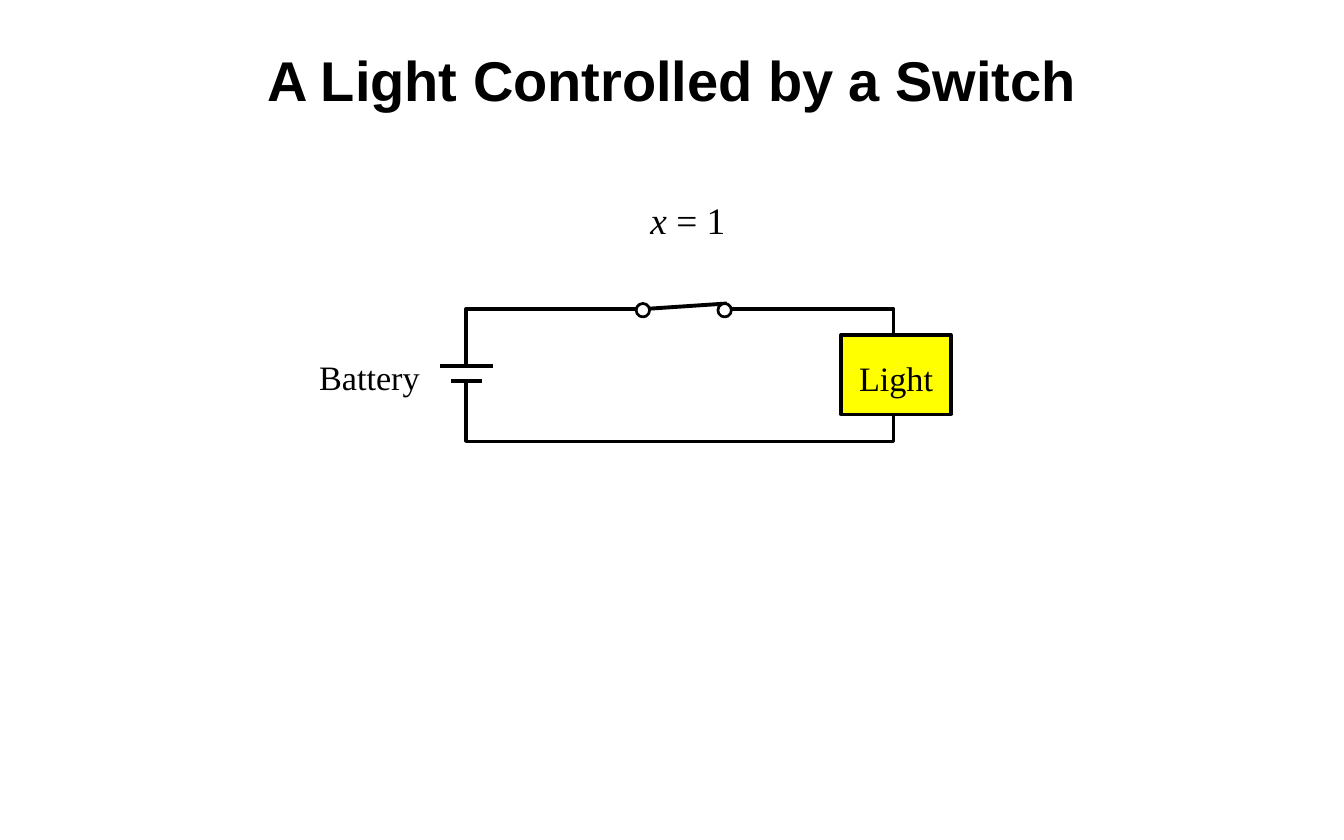
import pptx
import pptx.util
import pptx.dml.color
import pptx.enum.shapes
import pptx.enum.text
import pptx.oxml.ns
import lxml.etree

Inches, Pt = pptx.util.Inches, pptx.util.Pt
COLORS = {"ink": "000000", "lamp": "FFFF00", "paper": "FFFFFF"}
SERIF, SANS = "Times New Roman", "Arial"

# Content: places in inches
TITLE = "A Light Controlled by a Switch"
LEFT, RIGHT, TOP, BASE = 4.16, 7.98, 2.76, 3.94  # circuit loop
PLUS, MINUS = 3.27, 3.4  # battery plates
LAMP = (7.51, 2.99, 0.98, 0.71)
LAMP_END = LAMP[1] + LAMP[3]

LINES = [
    ((7.27, TOP), (6.43, TOP)),
    ((4.88, TOP), (5.72, TOP)),
    ((4.4, PLUS), (3.93, PLUS)),
    ((4.3, MINUS), (4.03, MINUS)),
    ((LEFT, MINUS), (LEFT, BASE)),
]
BENDS = [
    [(RIGHT, LAMP[1]), (RIGHT, TOP), (7.27, TOP)],
    [(4.88, TOP), (LEFT, TOP), (LEFT, PLUS)],
    [(LEFT, 3.87), (LEFT, BASE), (RIGHT, BASE), (RIGHT, LAMP_END)],
]
ARM = ((6.49, 2.71), (5.74, TOP))
POLES, POLE_TOP, POLE_SIZE = (5.68, 6.41), 2.71, 0.12
# Each label: box, size, inset, runs of (text, italic)
LABELS = [
    ((2.85, 3.18, 0.99, 0.37), 22, (0, 0), [("Battery", False)]),
    ((7.67, 3.19, 0.75, 0.37), 22, (0, 0), [("Light", False)]),
    ((5.71, 1.71, 0.94, 0.51), 24, (0.1, 0.05), [("x ", True), ("= 1", False)]),
]


def color(name):
    return pptx.dml.color.RGBColor.from_string(COLORS[name])


def style(shape, fill=None, width=2.25):
    shape.shadow.inherit = False
    shape.line.color.rgb = color("ink")
    shape.line.width = Pt(width)
    if fill:
        shape.fill.solid()
        shape.fill.fore_color.rgb = color(fill)
    else:
        shape.fill.background()


def add_line(shapes, ends, width=2.25):
    kind = pptx.enum.shapes.MSO_CONNECTOR.STRAIGHT
    line = shapes.add_connector(kind, *(Inches(v) for end in ends for v in end))
    line.line.color.rgb = color("ink")
    line.line.width = Pt(width)
    props = line._element.spPr
    lxml.etree.SubElement(props, pptx.oxml.ns.qn("a:effectLst"))


def add_bend(shapes, points):
    start, *rest = [(Inches(x), Inches(y)) for x, y in points]
    path = shapes.build_freeform(*start)
    path.add_line_segments(rest, close=False)
    style(path.convert_to_shape())


def add_shape(shapes, kind, box, fill, width=2.25):
    style(shapes.add_shape(kind, *map(Inches, box)), fill, width)


def set_font(font, name, size):
    font.name, font.size = name, Pt(size)
    font.color.rgb = color("ink")


def add_label(shapes, box, size, inset, runs):
    frame = shapes.add_textbox(*map(Inches, box)).text_frame
    frame.margin_left = frame.margin_right = Inches(inset[0])
    frame.margin_top = frame.margin_bottom = Inches(inset[1])
    frame.word_wrap = bool(inset[0])
    frame.auto_size = pptx.enum.text.MSO_AUTO_SIZE.SHAPE_TO_FIT_TEXT
    para = frame.paragraphs[0]
    set_font(para.font, SERIF, size)
    for text, slant in runs:
        run = para.add_run()
        run.text = text
        run.font.italic = slant


def main():
    deck = pptx.Presentation()
    deck.slide_width, deck.slide_height = Inches(12), Inches(7.5)
    slide = deck.slides.add_slide(deck.slide_layouts[5])
    shapes = slide.shapes
    kinds = pptx.enum.shapes.MSO_SHAPE

    # Title
    title = shapes.title
    title.left, title.top = Inches(1), Inches(0.33)
    title.width, title.height = Inches(10), Inches(0.75)
    frame = title.text_frame
    frame.text = TITLE
    frame.vertical_anchor = pptx.enum.text.MSO_ANCHOR.MIDDLE
    para = frame.paragraphs[0]
    para.alignment = pptx.enum.text.PP_ALIGN.CENTER
    set_font(para.font, SANS, 36)
    para.font.bold = True

    # Circuit
    for ends in LINES:
        add_line(shapes, ends)
    for points in BENDS:
        add_bend(shapes, points)
    add_shape(shapes, kinds.RECTANGLE, LAMP, "lamp")

    # Switch
    switch = shapes.add_group_shape().shapes
    add_line(switch, ARM, 2.5)
    for left in POLES:
        box = (left, POLE_TOP, POLE_SIZE, POLE_SIZE)
        add_shape(switch, kinds.OVAL, box, "paper", 1.75)

    # Labels
    for label in LABELS:
        add_label(shapes, *label)

    deck.save("out.pptx")


if __name__ == "__main__":
    main()
